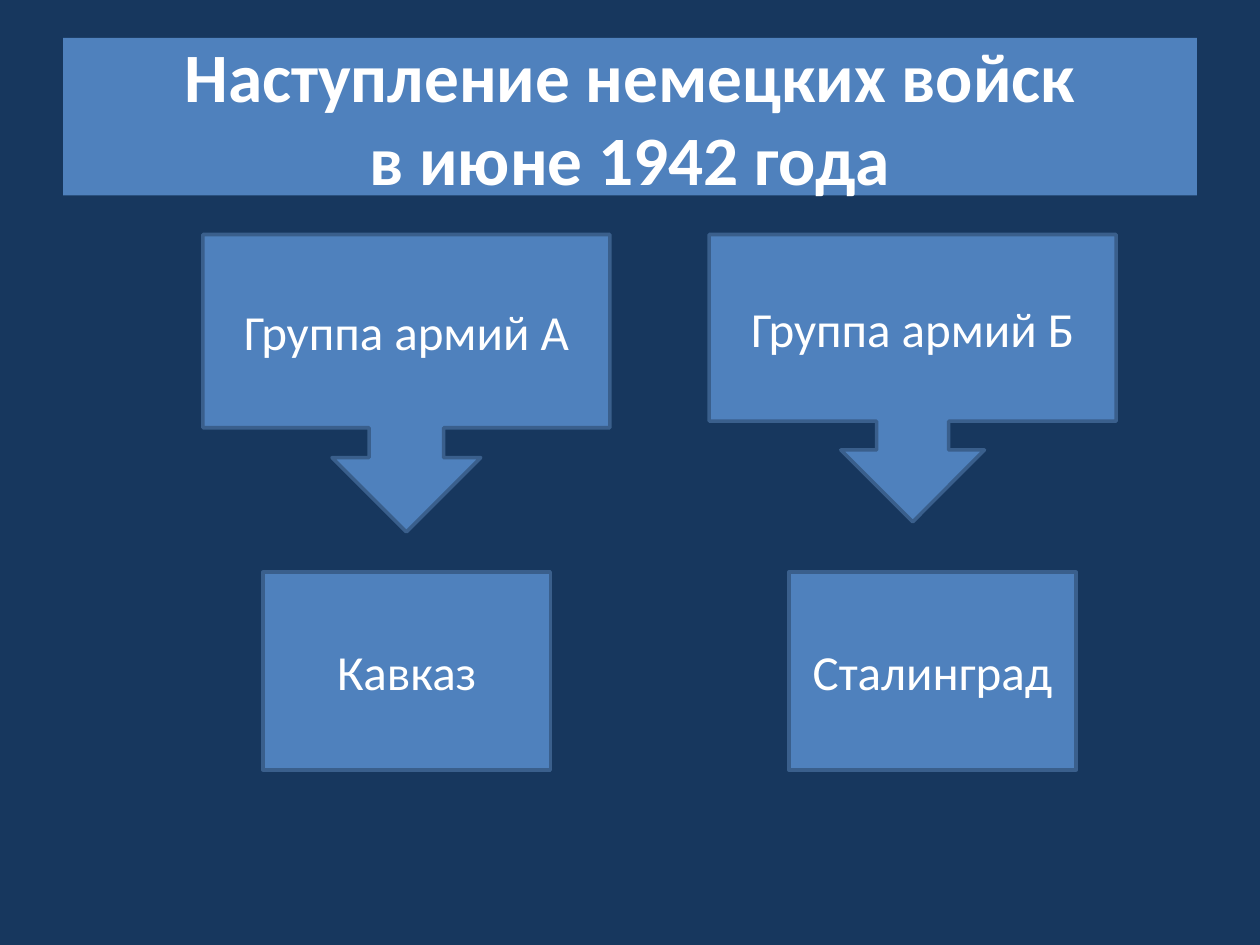
from pptx import Presentation
from pptx.dml.color import RGBColor
from pptx.enum.shapes import MSO_SHAPE
from pptx.enum.text import MSO_ANCHOR, MSO_AUTO_SIZE, PP_ALIGN
from pptx.util import Pt


def paint(fill, color):
    fill.solid()
    fill.fore_color.rgb = RGBColor.from_string(color)


def write(shape, text, size, bold=False):
    paint(shape.fill, "4F81BD")
    frame = shape.text_frame
    frame.text = text
    frame.word_wrap = True
    frame.auto_size = MSO_AUTO_SIZE.NONE
    frame.vertical_anchor = MSO_ANCHOR.MIDDLE
    line = frame.paragraphs[0]
    line.alignment = PP_ALIGN.CENTER
    for run in line.runs:
        run.font.name = "Calibri"
        run.font.size = Pt(size)
        run.font.bold = bold
        paint(run.font.fill, "FFFFFF")


def add_title(slide, left, top, width, height):
    title = slide.shapes.title
    title.left, title.top = Pt(left), Pt(top)
    title.width, title.height = Pt(width), Pt(height)
    write(title, "Наступление немецких войск\vв июне 1942 года", 39.6, True)


def add_block(slide, kind, text, left, top, width, height):
    block = slide.shapes.add_shape(kind, Pt(left), Pt(top), Pt(width), Pt(height))
    block.shadow.inherit = False
    paint(block.line.fill, "3A5F8C")
    block.line.width = Pt(2)
    write(block, text, 28)


def add_branch(slide, left, top, width, army, depth, goal, inset):
    add_block(slide, MSO_SHAPE.DOWN_ARROW_CALLOUT, army, left, top, width, depth)
    add_block(slide, MSO_SHAPE.RECTANGLE, goal, left + inset, top + 193, 164.2, 113)


def main():
    deck = Presentation()
    deck.slide_width, deck.slide_height = Pt(720), Pt(540)
    slide = deck.slides.add_slide(deck.slide_layouts[5])
    paint(slide.background.fill, "17375E")
    add_title(slide, 36, 21.6, 648, 90)
    add_branch(slide, 116, 134, 232.5, "Группа армий А", 170, "Кавказ", 34.3)
    add_branch(slide, 405.3, 134, 232.5, "Группа армий Б", 164.2, "Сталинград", 45.4)
    deck.save("out.pptx")


if __name__ == "__main__":
    main()
